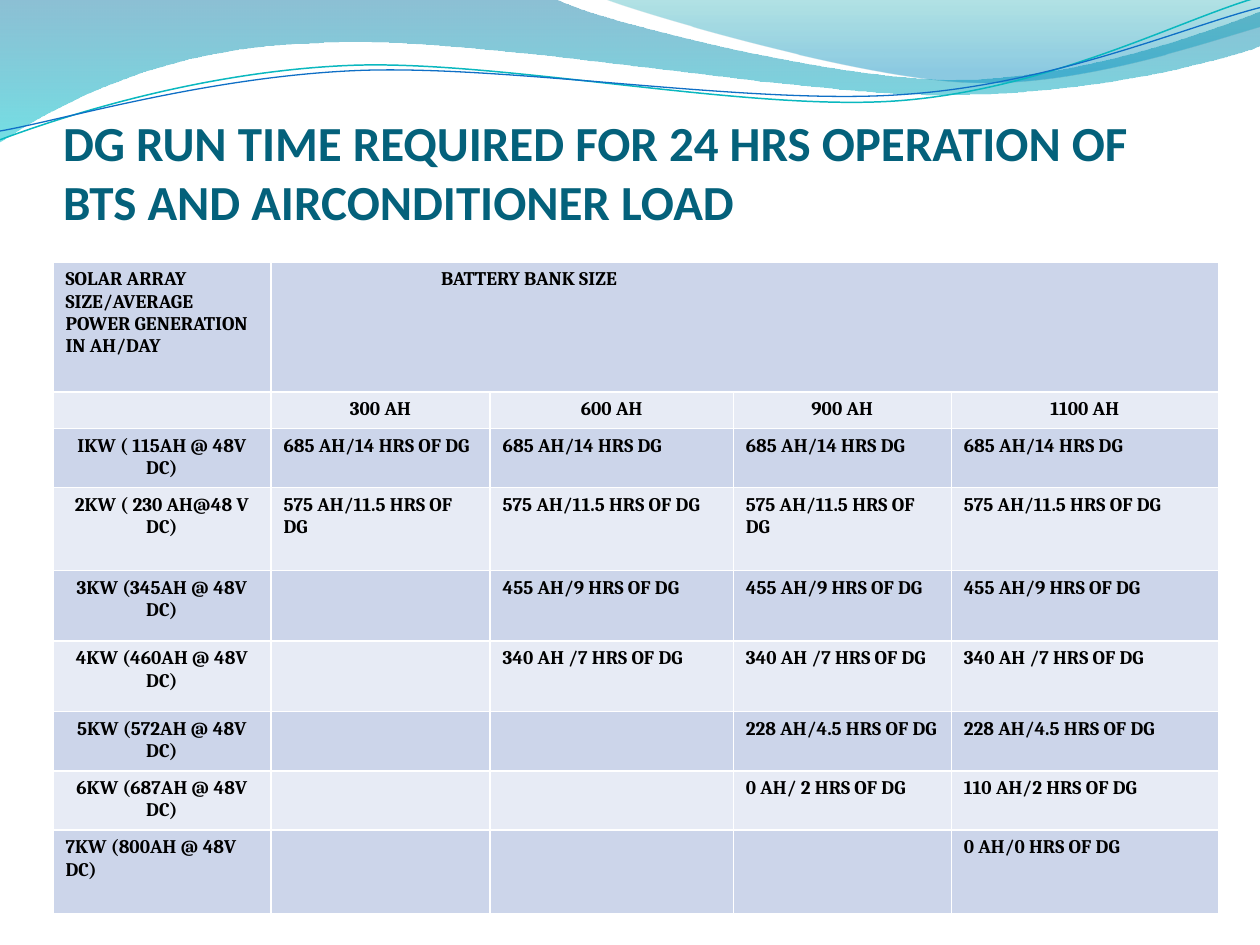
"""Build the slide on diesel generator run time by solar array and battery size."""
import math

from lxml import etree
from pptx import Presentation
from pptx.dml.color import RGBColor
from pptx.enum.text import MSO_ANCHOR, MSO_AUTO_SIZE, PP_ALIGN
from pptx.oxml.ns import qn
from pptx.util import Inches, Pt

LEFT, CENTER = PP_ALIGN.LEFT, PP_ALIGN.CENTER
BOTTOM = MSO_ANCHOR.BOTTOM
NO_AUTOFIT = MSO_AUTO_SIZE.NONE

COLORS = {
    "title": "04617B", "text": "000000", "odd_row": "CCD5EA", "even_row": "E7EBF5",
    "band_top": "0074A1", "band_bottom": "00C6CF",
    "crest_top": "00A1A9", "crest_bottom": "008BBF",
    "teal_line": "0AB8BF", "blue_line": "0F6FC6",
}
TITLE = "DG RUN TIME REQUIRED FOR 24 HRS OPERATION OF BTS AND AIRCONDITIONER LOAD"
ROWS = [
    ["SOLAR ARRAY SIZE/AVERAGE POWER GENERATION IN AH/DAY", "BATTERY BANK SIZE", "", "", ""],
    ["", "300 AH", "600 AH", "900 AH", "1100 AH"],
    ["IKW ( 115AH @ 48V DC)", "685 AH/14 HRS OF DG"] + ["685 AH/14 HRS DG"] * 3,
    ["2KW ( 230 AH@48 V DC)"] + ["575 AH/11.5 HRS OF DG"] * 4,
    ["3KW (345AH @ 48V DC)", ""] + ["455 AH/9 HRS OF DG"] * 3,
    ["4KW (460AH @ 48V DC)", ""] + ["340 AH /7 HRS OF DG"] * 3,
    ["5KW (572AH @ 48V DC)", "", ""] + ["228 AH/4.5 HRS OF DG"] * 2,
    ["6KW (687AH @ 48V DC)", "", "", "0 AH/ 2 HRS OF DG", "110 AH/2 HRS OF DG"],
    ["7KW (800AH @ 48V DC)", "", "", "", "0 AH/0 HRS OF DG"],
]
COLUMN_WIDTHS = [1.73, 1.74, 1.93, 1.73, 2.12]
ROW_HEIGHTS = [1.03, 0.29, 0.47, 0.66, 0.56, 0.56, 0.47, 0.47, 0.66]

BANDS = [
    ((-0.01, -0.01, 10.02, 1.14),
     [[(0, 0)], [(4.4, -0.01)],
      [(4.76, 0.17), (6.64, 0.63), (7.58, 0.63)], [(8.53, 0.63), (9.58, 0.26), (10, 0.09)],
      [(10.01, 0.36)],
      [(9.83, 0.44), (8.7, 0.76), (7.46, 0.75)], [(6.22, 0.75), (3.82, 0.28), (2.57, 0.34)],
      [(1.29, 0.36), (0.46, 0.83), (-0.01, 1.13)], [(0, 0)]],
     [(0, "band_top", 45), (1, "band_bottom", 55)]),
    ((4.79, -0.01, 5.21, 0.7),
     [[(4.79, -0.01)],
      [(5.09, 0.11), (6.82, 0.62), (7.69, 0.65)], [(8.56, 0.69), (9.61, 0.32), (10, 0.21)],
      [(10, 0)], [(4.79, -0.01)]],
     [(0, "crest_top", 30), (0.8, "crest_bottom", 45)]),
]
WAVES = [
    ((-0.02, 0.22, 10.02, 0.71),
     [[(0, 1.11)], [(0.48, 0.93), (1.58, 0.57), (2.77, 0.52)],
      [(3.95, 0.47), (5.93, 0.89), (7.13, 0.8)], [(8.33, 0.71), (9.38, 0.15), (9.98, -0.02)]],
     "teal_line", 0.85),
    ((-0.02, 0.3, 10.03, 0.58),
     [[(0, 1.04)], [(0.47, 0.96), (1.64, 0.61), (2.83, 0.56)],
      [(4.03, 0.51), (5.97, 0.84), (7.17, 0.75)], [(8.36, 0.67), (9.41, 0.21), (10, 0.06)]],
     "blue_line", 0.75),
]
WAVE_TILT = -2.7


def rgb(name):
    return RGBColor.from_string(COLORS[name])


def add_outline(slide, box, segments, close, tilt=0):
    left, top, width, height = box
    builder = slide.shapes.build_freeform(Inches(left), Inches(top))
    builder.add_line_segments([(Inches(left + width), Inches(top + height))], close=False)
    outline = builder.convert_to_shape()
    outline.shadow.inherit = False
    outline.rotation = tilt
    path = next(outline.element.iter(qn("a:path")))
    for step in list(path):
        path.remove(step)
    cos, sin = math.cos(math.radians(-tilt)), math.sin(math.radians(-tilt))
    for index, segment in enumerate(segments):
        tag = "a:cubicBezTo" if len(segment) == 3 else "a:lnTo" if index else "a:moveTo"
        step = etree.SubElement(path, qn(tag))
        for x, y in segment:
            dx, dy = x - left - width / 2, y - top - height / 2
            etree.SubElement(step, qn("a:pt"),
                             x=str(Inches(dx * cos - dy * sin + width / 2)),
                             y=str(Inches(dx * sin + dy * cos + height / 2)))
    if close:
        etree.SubElement(path, qn("a:close"))
    return outline


def add_band(slide, box, segments, stops):
    band = add_outline(slide, box, segments, True)
    band.line.fill.background()
    band.fill.gradient()
    band.fill.gradient_angle = 270
    for stop, (position, color, _) in zip(band.fill.gradient_stops, stops):
        stop.position = position
        stop.color.rgb = rgb(color)
    for node, (_, _, opacity) in zip(band.element.iter(qn("a:gs")), stops):
        etree.SubElement(node[0], qn("a:alpha"), val=str(opacity * 1000))


def add_wave(slide, box, segments, color, width):
    wave = add_outline(slide, box, segments, False, WAVE_TILT)
    wave.fill.background()
    wave.line.color.rgb = rgb(color)
    wave.line.width = Pt(width)


def style_text(paragraph, font_name, size, color, alignment):
    paragraph.alignment = alignment
    for run in paragraph.runs:
        run.font.name, run.font.size, run.font.bold = font_name, Pt(size), True
        run.font.color.rgb = rgb(color)


def add_title(slide):
    title = slide.shapes.title
    slide.shapes.element.append(title.element)
    title.left, title.top, title.width, title.height = map(Inches, (0.5, 0.5, 9, 1.33))
    frame = title.text_frame
    frame.text = TITLE
    frame.word_wrap, frame.auto_size, frame.vertical_anchor = True, NO_AUTOFIT, BOTTOM
    frame.margin_left = frame.margin_right = frame.margin_bottom = 0
    style_text(frame.paragraphs[0], "Calibri", 28, "title", LEFT)


def add_run_times(slide):
    table = slide.shapes.add_table(
        len(ROWS), len(COLUMN_WIDTHS), Inches(0.42), Inches(2.08),
        Inches(sum(COLUMN_WIDTHS)), Inches(sum(ROW_HEIGHTS))).table
    table.first_row = False
    for column, width in zip(table.columns, COLUMN_WIDTHS):
        column.width = Inches(width)
    for r, (texts, height) in enumerate(zip(ROWS, ROW_HEIGHTS)):
        table.rows[r].height = Inches(height)
        for c, text in enumerate(texts):
            cell = table.cell(r, c)
            cell.fill.solid()
            cell.fill.fore_color.rgb = rgb("even_row" if r % 2 else "odd_row")
            paragraph = cell.text_frame.paragraphs[0]
            paragraph.text = text
            centred = r == 1 or (c == 0 and 1 < r < len(ROWS) - 1)
            style_text(paragraph, "Cambria", 11, "text", CENTER if centred else LEFT)
            if not text:
                etree.SubElement(paragraph._p, qn("a:endParaRPr"), sz="1100")
    heading = table.cell(0, 1)
    heading.merge(table.cell(0, 4))
    heading.margin_left = Inches(1.35)


def main():
    presentation = Presentation()
    presentation.slide_width, presentation.slide_height = Inches(10), Inches(7.5)
    slide = presentation.slides.add_slide(presentation.slide_layouts[5])
    for band in BANDS:
        add_band(slide, *band)
    for wave in WAVES:
        add_wave(slide, *wave)
    add_title(slide)
    add_run_times(slide)
    presentation.save("out.pptx")


if __name__ == "__main__":
    main()
